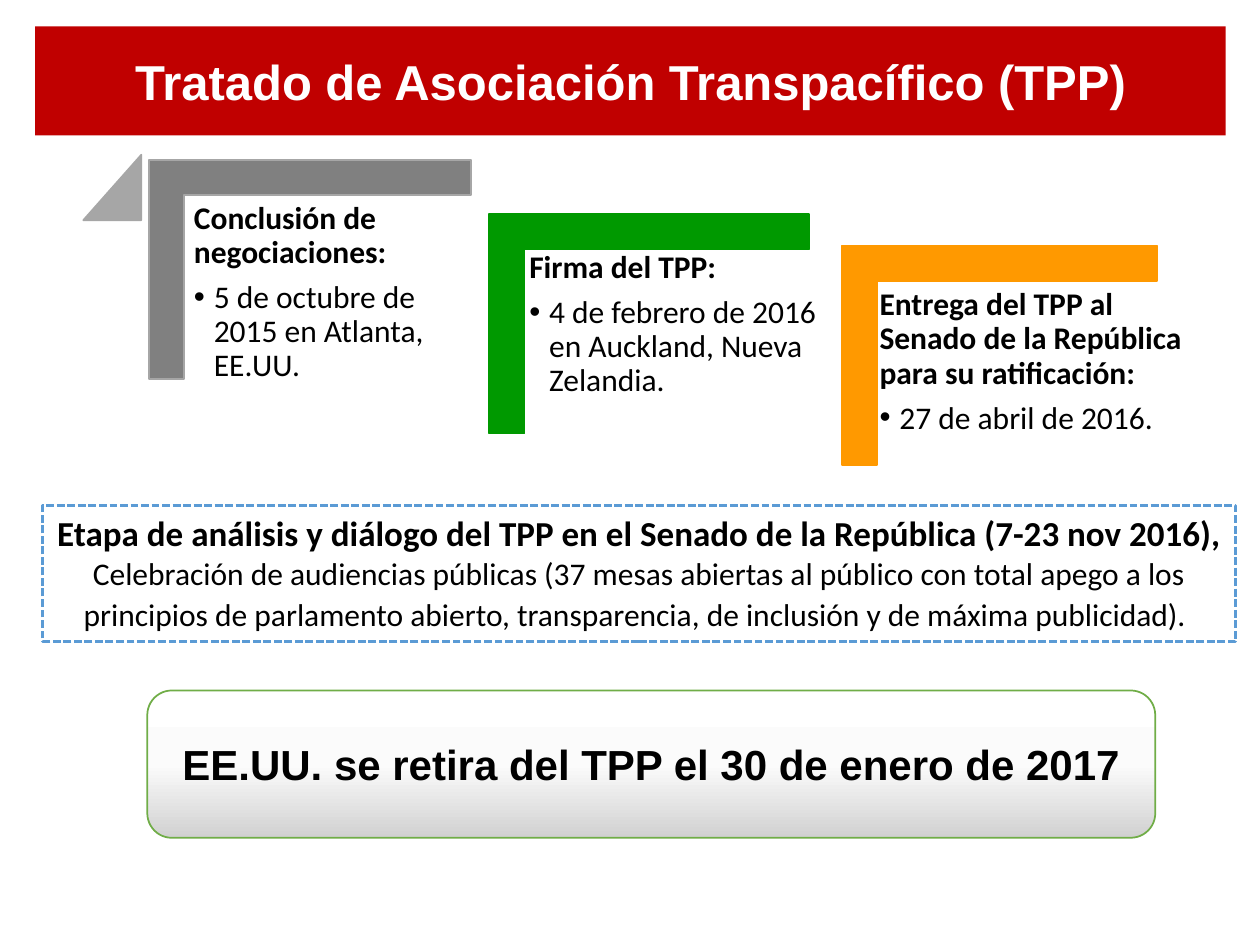
from copy import deepcopy
from lxml.etree import SubElement
from pptx import Presentation
from pptx.dml.color import RGBColor
from pptx.enum.dml import MSO_LINE
from pptx.enum.shapes import MSO_SHAPE
from pptx.enum.text import MSO_ANCHOR, MSO_AUTO_SIZE, PP_ALIGN
from pptx.oxml.ns import qn
from pptx.util import Cm, Pt


def paint(form, color):
    form.solid()
    form.fore_color.rgb = RGBColor.from_string(color)


class Deck:
    """Holds the style and the current slide of the treaty deck."""

    body, head, ink = "Calibri", "Arial", "000000"

    def __init__(self):
        self.file = Presentation()
        self.file.slide_width, self.file.slide_height = Cm(25.4), Cm(19.05)
        self.slide = self.file.slides.add_slide(self.file.slide_layouts[4])

    def place(self, shape, box):
        shape.left, shape.top, shape.width, shape.height = map(Cm, box)

    def holder(self, index, box, inset=0.25, anchor=MSO_ANCHOR.TOP):
        shape = self.slide.placeholders[index]
        self.place(shape, box)
        frame = shape.text_frame
        frame.word_wrap, frame.auto_size = True, MSO_AUTO_SIZE.NONE
        frame.vertical_anchor = anchor
        frame.margin_left = frame.margin_right = Cm(inset)
        frame.margin_top = frame.margin_bottom = Cm(min(inset, 0.13))
        return shape

    def line(self, frame, runs, first=False, bullet=False, align=PP_ALIGN.LEFT,
             space=1.0, after=0):
        par = frame.paragraphs[0] if first else frame.add_paragraph()
        props = par._p.get_or_add_pPr()
        shift = Cm(0.4) if bullet else 0
        props.set("marL", str(shift))
        props.set("indent", str(-shift))
        if bullet:
            par.level = 1
            SubElement(props, qn("a:buChar")).set("char", "•")
        else:
            SubElement(props, qn("a:buNone"))
        par.alignment, par.line_spacing = align, space
        par.space_before, par.space_after = Pt(0), Pt(after)
        for text, size, bold, name, color in runs:
            run = par.add_run()
            run.text = text
            font = run.font
            font.size, font.bold, font.name = Pt(size), bold, name
            font.color.rgb = RGBColor.from_string(color)

    def title(self, text, box, color):
        shape = self.holder(0, box, anchor=MSO_ANCHOR.MIDDLE)
        paint(shape.fill, color)
        self.line(shape.text_frame, [(text, 28, True, self.head, "FFFFFF")],
                  first=True, align=PP_ALIGN.CENTER)

    def shape(self, kind, box, edge):
        shape = self.slide.shapes.add_shape(kind, *map(Cm, box))
        shape.shadow.inherit = False
        paint(shape.line.fill, edge)
        shape.line.width = Pt(1)
        return shape

    def wedge(self, box, color):
        shape = self.shape(MSO_SHAPE.ISOSCELES_TRIANGLE, box, color)
        shape.adjustments[0] = 1
        paint(shape.fill, color)

    def corner(self, left, top, wide, color, edge):
        high = 4.42
        turn = (wide - high) / 2
        shape = self.shape(MSO_SHAPE.CORNER, (left + turn, top - turn, high, wide), edge)
        shape.rotation = 90
        shape.adjustments[0] = shape.adjustments[1] = 0.161
        paint(shape.fill, color)

    def step(self, index, box, head, item):
        frame = self.holder(index, box, inset=0.15).text_frame
        self.line(frame, [(head, 18, True, self.body, self.ink)],
                  first=True, space=0.9, after=6.3)
        self.line(frame, [(item, 18, False, self.body, self.ink)],
                  bullet=True, space=0.9)

    def stage(self, index, box, rows, edge):
        shape = self.holder(index, box)
        paint(shape.fill, "FFFFFF")
        paint(shape.line.fill, edge)
        shape.line.width, shape.line.dash_style = Pt(1.5), MSO_LINE.SQUARE_DOT
        for spot, row in enumerate(rows):
            runs = [(text, size, bold, self.body, self.ink) for text, size, bold in row]
            self.line(shape.text_frame, runs, first=spot == 0, align=PP_ALIGN.CENTER)

    def panel(self, text, box, stops, edge):
        shape = self.shape(MSO_SHAPE.ROUNDED_RECTANGLE, box, edge)
        shape.fill.gradient()
        shape.fill.gradient_angle = 270
        mark = shape._element.spPr.find(".//" + qn("a:gs"))
        mark.addnext(deepcopy(mark))
        for stop, (spot, color) in zip(shape.fill.gradient_stops, stops):
            stop.position = spot
            stop.color.rgb = RGBColor.from_string(color)
        frame = shape.text_frame
        frame.word_wrap, frame.vertical_anchor = True, MSO_ANCHOR.MIDDLE
        self.line(frame, [(text, 24, True, self.head, self.ink)],
                  first=True, align=PP_ALIGN.CENTER)


def main():
    deck = Deck()
    deck.title("Tratado de Asociación Transpacífico (TPP)", (0.71, 0.53, 24, 2.2), "C00000")
    deck.wedge((1.68, 3.12, 1.17, 1.32), "A6A6A6")
    steps = [
        ((3, 3.22, 6.5), "808080", "A6A6A6", (3.76, 3.94, 5.74),
         "Conclusión de negociaciones:", "5 de octubre de 2015 en Atlanta, EE.UU."),
        ((9.86, 4.32, 6.45), "009900", "009900", (10.52, 4.93, 6.43),
         "Firma del TPP:", "4 de febrero de 2016 en Auckland, Nueva Zelandia."),
        ((16.97, 4.95, 6.35), "FF9900", "FF9900", (17.58, 5.69, 7.11),
         "Entrega del TPP al Senado de la República para su ratificación:",
         "27 de abril de 2016."),
    ]
    for index, (spot, color, edge, box, head, item) in enumerate(steps, 1):
        deck.corner(*spot, color, edge)
        deck.step(index, (*box, 3.71), head, item)
    deck.stage(4, (0.86, 10.19, 24.05, 2.74), [
        [("Etapa de análisis y diálogo del TPP en el Senado de la República "
          "(7-23 nov 2016), ", 20, True)],
        [("Celebración de audiencias públicas (37 mesas abiertas al público con total "
          "apego a los principios de parlamento abierto, transparencia, de inclusión y "
          "de máxima publicidad).", 18, False), (" ", 20, True)],
    ], "5B9BD5")
    deck.panel("EE.UU. se retira del TPP el 30 de enero de 2017", (2.97, 13.92, 20.32, 2.97),
               [(0, "FFFFFF"), (0.5, "FBFBFB"), (1, "D1D1D1")], "70AD47")
    deck.file.save("out.pptx")


if __name__ == "__main__":
    main()
